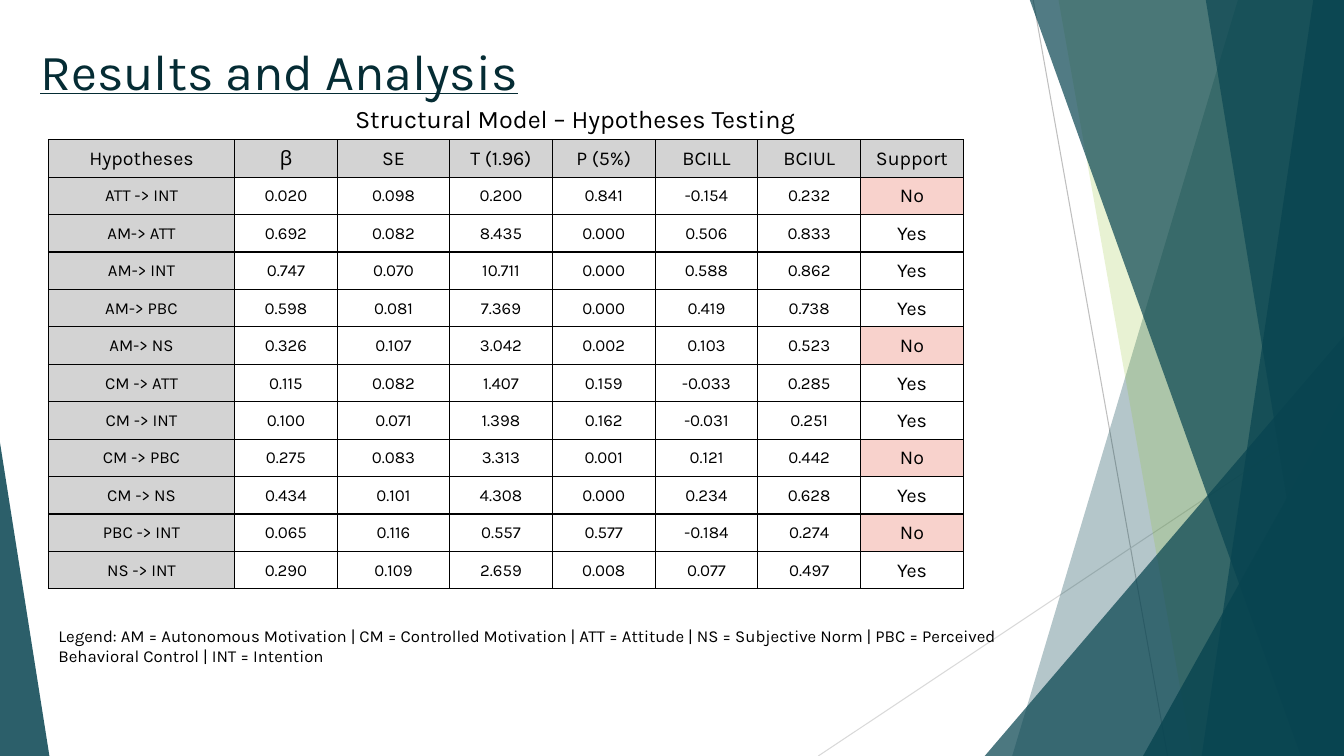
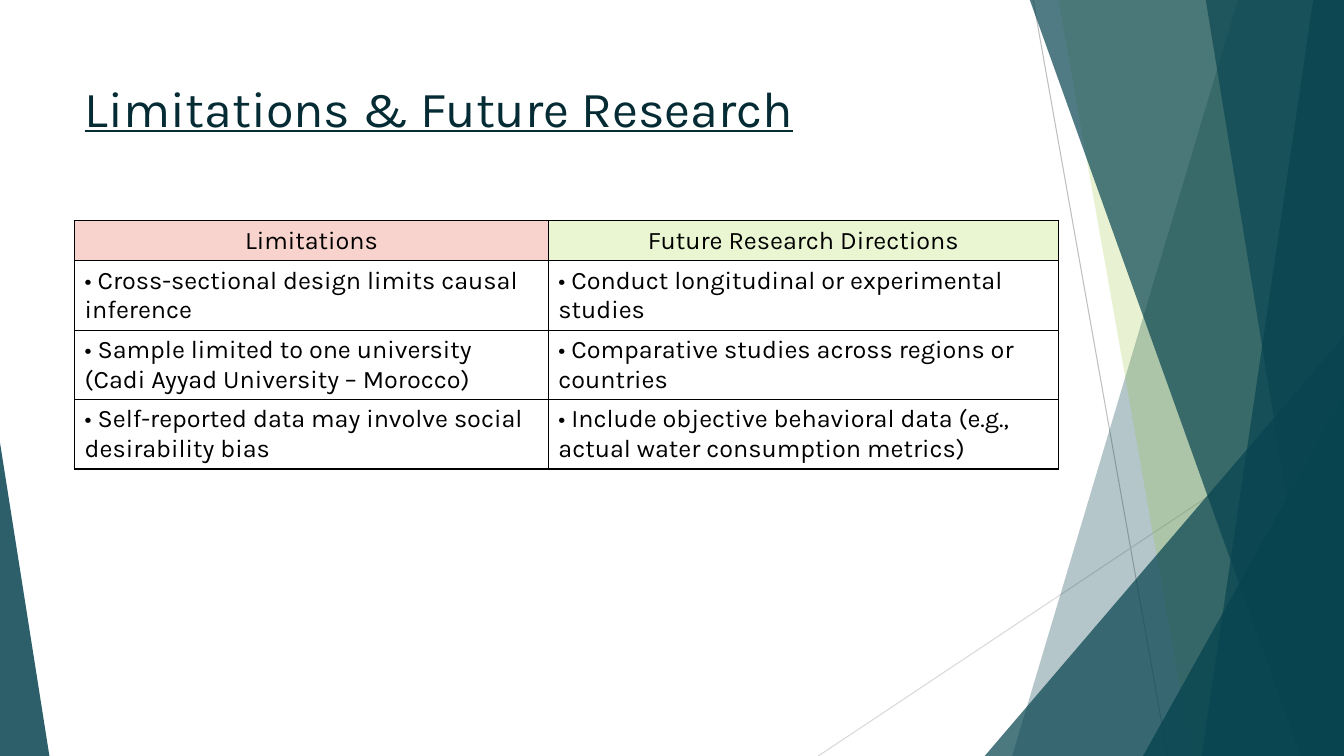
from pptx import Presentation
from pptx.dml.color import RGBColor
from pptx.enum.shapes import MSO_CONNECTOR, MSO_SHAPE
from pptx.enum.text import MSO_ANCHOR, PP_ALIGN
from pptx.oxml.ns import qn
from pptx.util import Pt
from lxml.etree import SubElement

FONT = "Karla"
BLACK = RGBColor(0x00, 0x00, 0x00)
INK = RGBColor(0x05, 0x2C, 0x34)
TEAL = RGBColor(0x08, 0x44, 0x50)
GREEN = RGBColor(0x90, 0xC2, 0x26)
GREY = RGBColor(0xD3, 0xD3, 0xD3)
PINK = RGBColor(0xF8, 0xD2, 0xCC)
LIME = RGBColor(0xEA, 0xF6, 0xD1)
RULE = RGBColor(0xBF, 0xBF, 0xBF)
PALE = RGBColor(0xD9, 0xD9, 0xD9)
WIDE, HIGH = 960, 540

TESTS = [
    ["Hypotheses", "β", "SE", "T (1.96)", "P (5%)", "BCILL", "BCIUL", "Support"],
    ["ATT -> INT", "0.020", "0.098", "0.200", "0.841", "-0.154", "0.232", "No"],
    ["AM-> ATT", "0.692", "0.082", "8.435", "0.000", "0.506", "0.833", "Yes"],
    ["AM-> INT", "0.747", "0.070", "10.711", "0.000", "0.588", "0.862", "Yes"],
    ["AM-> PBC", "0.598", "0.081", "7.369", "0.000", "0.419", "0.738", "Yes"],
    ["AM-> NS", "0.326", "0.107", "3.042", "0.002", "0.103", "0.523", "No"],
    ["CM -> ATT", "0.115", "0.082", "1.407", "0.159", "-0.033", "0.285", "Yes"],
    ["CM -> INT", "0.100", "0.071", "1.398", "0.162", "-0.031", "0.251", "Yes"],
    ["CM -> PBC", "0.275", "0.083", "3.313", "0.001", "0.121", "0.442", "No"],
    ["CM -> NS", "0.434", "0.101", "4.308", "0.000", "0.234", "0.628", "Yes"],
    ["PBC -> INT", "0.065", "0.116", "0.557", "0.577", "-0.184", "0.274", "No"],
    ["NS -> INT", "0.290", "0.109", "2.659", "0.008", "0.077", "0.497", "Yes"],
]
LIMITS = [
    ["Limitations", "Future Research Directions"],
    ["• Cross-sectional design limits causal inference",
     "• Conduct longitudinal or experimental studies"],
    ["• Sample limited to one university (Cadi Ayyad University – Morocco)",
     "• Comparative studies across regions or countries"],
    ["• Self-reported data may involve social desirability bias",
     "• Include objective behavioral data (e.g., actual water consumption metrics)"],
]
LEGEND = ("Legend: AM = Autonomous Motivation | CM = Controlled Motivation | "
          "ATT = Attitude | NS = Subjective Norm | PBC = Perceived "
          "Behavioral Control | INT = Intention")


def write(frame, text, size, color=BLACK, align=PP_ALIGN.LEFT):
    """Set the text of a frame in the deck font."""
    frame.text = text
    para = frame.paragraphs[0]
    para.alignment = align
    font = para.runs[0].font
    font.name, font.size, font.color.rgb = FONT, Pt(size), color
    return font


def place(shape, left, top, width, height):
    """Move and size a shape."""
    shape.left, shape.top = Pt(left), Pt(top)
    shape.width, shape.height = Pt(width), Pt(height)


def tint(shape, color, alpha):
    """Give a shape a see-through fill and no line or shadow."""
    shape.shadow.inherit = False
    shape.fill.solid()
    shape.fill.fore_color.rgb = color
    shade = shape.element.spPr.find(".//" + qn("a:srgbClr"))
    SubElement(shade, qn("a:alpha")).set("val", str(alpha * 1000))
    shape.line.fill.background()


def ray(slide, start, end, color):
    """Draw a thin line."""
    ends = [Pt(n) for n in start + end]
    line = slide.shapes.add_connector(MSO_CONNECTOR.STRAIGHT, *ends)
    line.line.color.rgb = color
    line.line.width = Pt(0.75)
    SubElement(line.element.spPr, qn("a:effectLst"))


def band(slide, head, foot, alpha, color=TEAL):
    """Fill the area from a slanted edge to the right side."""
    build = slide.shapes.build_freeform(Pt(head), Pt(-0.6))
    spots = [(WIDE, -0.6), (WIDE, HIGH), (foot, HIGH)]
    build.add_line_segments([(Pt(x), Pt(y)) for x, y in spots], close=True)
    tint(build.convert_to_shape(), color, alpha)


def wedge(slide, left, top, width, peak, alpha):
    """Draw a triangle that stands on the bottom edge."""
    shape = slide.shapes.add_shape(
        MSO_SHAPE.ISOSCELES_TRIANGLE, Pt(left), Pt(top), Pt(width), Pt(HIGH - top))
    shape.adjustments[0] = peak
    tint(shape, TEAL, alpha)


def share(slide):
    """Draw the backdrop and move it to the layout of the slide."""
    ray(slide, (738, 0), (834, HIGH), RULE)
    ray(slide, (WIDE, 290), (584.5, HIGH), PALE)
    band(slide, 884.4, 723, 30)
    band(slide, 756, 851.6, 20, GREEN)
    wedge(slide, 703.4, 240, 256.6, 1, 72)
    band(slide, 735.4, 929.2, 70)
    band(slide, 938.2, 858.4, 70)
    band(slide, 861.2, 949.2, 65)
    wedge(slide, 816.5, 283, 143.5, 1, 80)
    wedge(slide, 0, 316.2, 35.3, 0, 85)
    tree = slide.slide_layout.shapes.element
    parts = [s for s in slide.shapes if not s.is_placeholder]
    for num, part in enumerate(parts, 100):
        part.element.find(".//" + qn("p:cNvPr")).set("id", str(num))
        tree.append(part.element)


def head(slide, text, left, top):
    """Fill the title placeholder."""
    title = slide.shapes.title
    place(title, left, top, 676.8, 65.5)
    frame = title.text_frame
    frame.vertical_anchor = MSO_ANCHOR.TOP
    frame.margin_top = Pt(7.2)
    write(frame, text, 36, INK).underline = True


def note(slide, text, size, left, top, width, height):
    """Add a text box."""
    box = slide.shapes.add_textbox(Pt(left), Pt(top), Pt(width), Pt(height))
    box.text_frame.word_wrap = True
    write(box.text_frame, text, size)


def frame_cell(cell):
    """Draw a black border on each side of a cell."""
    props = cell._tc.get_or_add_tcPr()
    for side in "LRTB":
        edge = SubElement(props, qn("a:ln" + side), w=str(Pt(1)))
        fill = SubElement(edge, qn("a:solidFill"))
        SubElement(fill, qn("a:srgbClr"), val=str(BLACK))


def grid(slide, rows, left, top, widths, heights, style, inset=None):
    """Add a table; style maps row, column and text to size, align and fill."""
    table = slide.shapes.add_table(
        len(rows), len(widths), Pt(left), Pt(top),
        Pt(sum(widths)), Pt(sum(heights))).table
    table.first_row = table.horz_banding = False
    for col, width in zip(table.columns, widths):
        col.width = Pt(width)
    for row, height in zip(table.rows, heights):
        row.height = Pt(height)
    for r, line in enumerate(rows):
        for c, text in enumerate(line):
            cell = table.cell(r, c)
            size, align, color = style(r, c, text)
            write(cell.text_frame, text, size, align=align)
            cell.vertical_anchor = MSO_ANCHOR.MIDDLE
            if inset is not None:
                cell.margin_left = cell.margin_right = cell.margin_top = Pt(inset)
                cell.margin_bottom = Pt(0)
            frame_cell(cell)
            if color is None:
                cell.fill.background()
            else:
                cell.fill.solid()
                cell.fill.fore_color.rgb = color


def test_style(row, col, text):
    """Style a cell of the hypotheses table."""
    size = 14 if row == 0 or col == 7 else 12
    color = GREY if row == 0 or col == 0 else PINK if text == "No" else None
    return size, PP_ALIGN.CENTER, color


def limit_style(row, col, text):
    """Style a cell of the limitations table."""
    if row == 0:
        return 18, PP_ALIGN.CENTER, (PINK, LIME)[col]
    return 18, PP_ALIGN.LEFT, None


def main():
    """Build and save the deck."""
    deck = Presentation()
    deck.slide_width, deck.slide_height = Pt(WIDE), Pt(HIGH)
    plain = deck.slide_layouts[5]

    slide = deck.slides.add_slide(plain)
    share(slide)
    head(slide, "Results and Analysis", 21.6, 21.6)
    note(slide, "Structural Model – Hypotheses Testing", 18, 246.5, 70.6, 337.7, 28.8)
    note(slide, LEGEND, 12, 34.6, 443.5, 709.2, 36)
    grid(slide, TESTS, 34.6, 99.8, [133, 73.4, 80.2] + [73.4] * 5,
         [26.75] * 12, test_style, 0.72)

    slide = deck.slides.add_slide(plain)
    head(slide, "Limitations & Future Research", 53.3, 48.2)
    grid(slide, LIMITS, 53.3, 157.5, [338.4, 364.3], [28.8] + [49.6] * 3, limit_style)

    deck.save("out.pptx")


if __name__ == "__main__":
    main()
